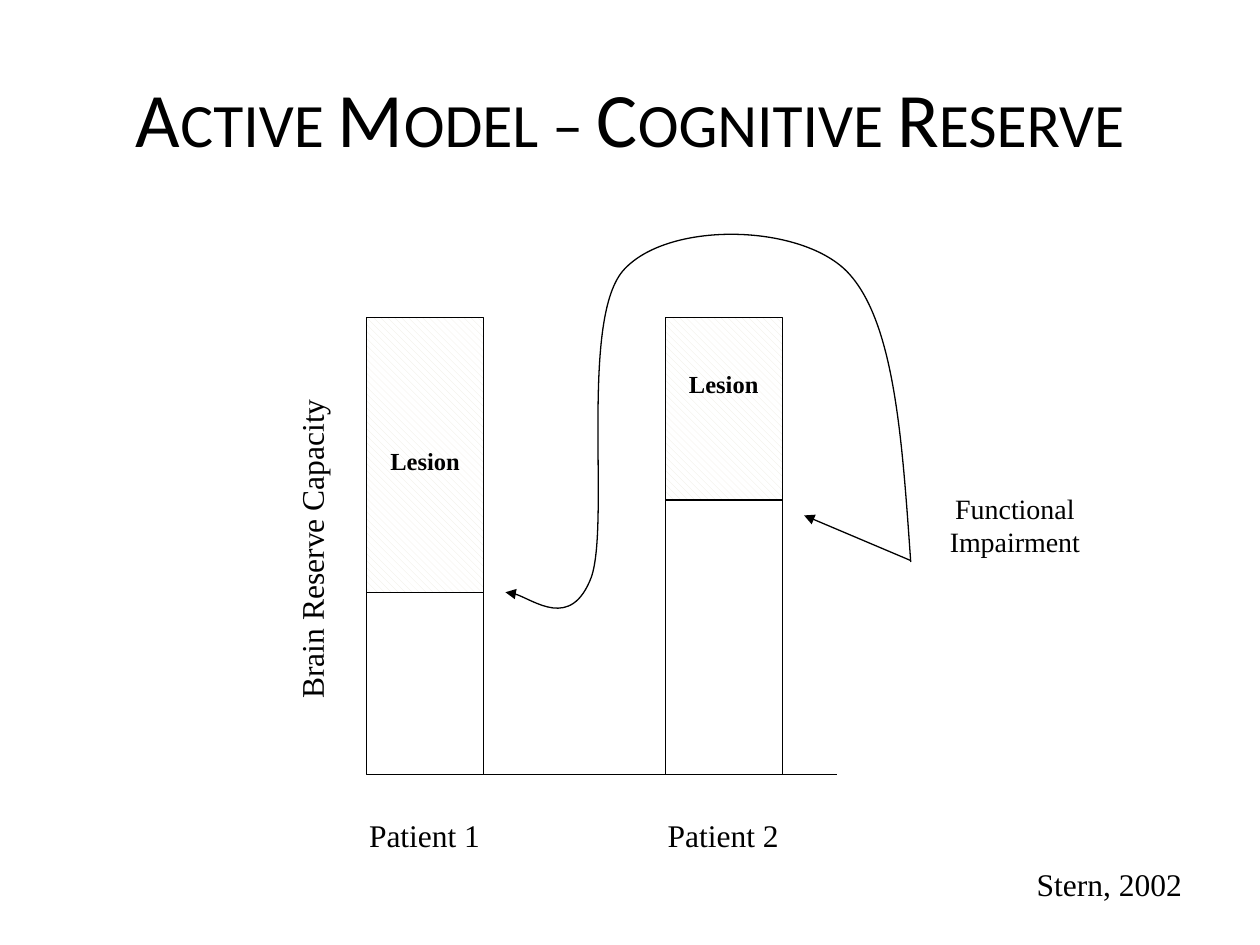
from lxml.etree import SubElement
from pptx import Presentation
from pptx.dml.color import RGBColor
from pptx.enum.dml import MSO_PATTERN
from pptx.enum.shapes import MSO_CONNECTOR, MSO_SHAPE
from pptx.enum.text import MSO_ANCHOR, MSO_AUTO_SIZE, PP_ALIGN
from pptx.oxml.ns import qn
from pptx.util import Cm, Pt

BLACK = RGBColor(0, 0, 0)
WHITE = RGBColor(255, 255, 255)
CREAM = RGBColor(0xEE, 0xEC, 0xE1)

SERIF = {"name": "Times New Roman", "size": Pt(18), "bold": False}
SMALL = {**SERIF, "size": Pt(16)}
BOLD = {**SERIF, "size": Pt(14), "bold": True}
HEAD = {"name": "Calibri", "size": Pt(44), "bold": False}
BENDS = [
    [(8, 4.45), (7.85, 2.01), (6.88, 1.02)],
    [(5.92, 0.05), (3.23, 0), (2.36, 1.02)],
    [(1.5, 2.06), (2.11, 6.1), (1.73, 7.19)],
    [(1.32, 8.26), (0.28, 7.44), (0, 7.49)],
]


def style(font, look):
    for key, value in look.items():
        setattr(font, key, value)
    font.color.rgb = BLACK


def label(parent, box, lines, look=SERIF, align=PP_ALIGN.LEFT, wrap=False):
    shape = parent.shapes.add_textbox(*map(Cm, box))
    frame = shape.text_frame
    frame.text = "\n".join(lines)
    frame.word_wrap = wrap
    frame.auto_size = MSO_AUTO_SIZE.SHAPE_TO_FIT_TEXT
    for para in frame.paragraphs:
        para.alignment = align
        for run in para.runs:
            style(run.font, look)
    return shape


def ink(shape):
    shape.line.color.rgb = BLACK
    shape.line.width = Pt(0.75)


def point(shape):
    SubElement(shape.line._ln, qn("a:tailEnd"), type="triangle")


def line(parent, start, end):
    shape = parent.shapes.add_connector(
        MSO_CONNECTOR.STRAIGHT, *map(Cm, (*start, *end)))
    ink(shape)
    SubElement(shape._element.spPr, qn("a:effectLst"))
    return shape


def block(parent, box):
    shape = parent.shapes.add_shape(MSO_SHAPE.RECTANGLE, *map(Cm, box))
    shape.shadow.inherit = False
    shape.fill.background()
    ink(shape)
    return shape


def bar(parent, box, loss, drop, name):
    left, top, width, height = box
    block(parent, (left, top + loss, width, height - loss))
    lesion = block(parent, (left, top, width, loss))
    lesion.fill.patterned()
    lesion.fill.pattern = MSO_PATTERN.WIDE_DOWNWARD_DIAGONAL
    lesion.fill.fore_color.rgb = CREAM
    lesion.fill.back_color.rgb = WHITE
    label(parent, (left + 0.23, top + drop, 1.93, 0.84), ["Lesion"], BOLD, wrap=True)
    label(parent, (left - 0.2, top + height + 0.71, 2.74, 1.02), [name])


def curve(parent, left, top):
    def spot(x, y):
        return Cm(left + x), Cm(top + y)

    pen = parent.shapes.build_freeform(*spot(8.17, 6.88), scale=1.0)
    pen.add_line_segments([spot(*dot) for bend in BENDS for dot in bend], close=False)
    shape = pen.convert_to_shape()
    shape.shadow.inherit = False
    shape.fill.background()
    ink(shape)
    point(shape)
    steps = list(shape._element.iter(qn("a:lnTo")))
    trace = steps[0].getparent()
    for i in range(0, len(steps), 3):
        bend = SubElement(trace, qn("a:cubicBezTo"))
        for step in steps[i:i + 3]:
            bend.append(step[0])
            trace.remove(step)


def title(slide, box):
    shape = slide.shapes.title
    for key, value in zip(("left", "top", "width", "height"), box):
        setattr(shape, key, Cm(value))
    frame = shape.text_frame
    frame.text = "Active Model – Cognitive Reserve"
    frame.vertical_anchor = MSO_ANCHOR.MIDDLE
    para = frame.paragraphs[0]
    para.alignment = PP_ALIGN.CENTER
    font = para.runs[0].font
    style(font, HEAD)
    font._element.set("cap", "small")


def model(slide, box):
    left, top, width, height = box
    group = slide.shapes.add_group_shape()
    base = top + height
    line(group, (left, base), (left + width, base))
    bar(group, (left + 6.02, top, 2.36, height), 3.68, 0.91, "Patient 2")
    bar(group, (left, top, 2.36, height), 5.54, 2.46, "Patient 1")
    axis = label(group, (left - 6.37, top + 2.16, 10.52, 1.02),
                 ["Brain Reserve Capacity"], wrap=True)
    axis.rotation = 270
    label(group, (left + 11.48, top + 3.38, 3.18, 1.63),
          ["Functional", "Impairment"], SMALL, PP_ALIGN.CENTER)
    point(line(group, (left + 10.97, top + 4.9), (left + 8.82, top + 3.99)))
    curve(group, left + 2.8, top - 1.95)


def main():
    deck = Presentation()
    deck.slide_width, deck.slide_height = Cm(25.4), Cm(19.05)
    slide = deck.slides.add_slide(deck.slide_layouts[5])
    title(slide, (1.27, 0.76, 22.86, 3.18))
    model(slide, (7.39, 6.4, 9.48, 9.22))
    label(slide, (20.65, 17.32, 3.48, 1.02), ["Stern, 2002"])
    deck.save("out.pptx")


if __name__ == "__main__":
    main()
